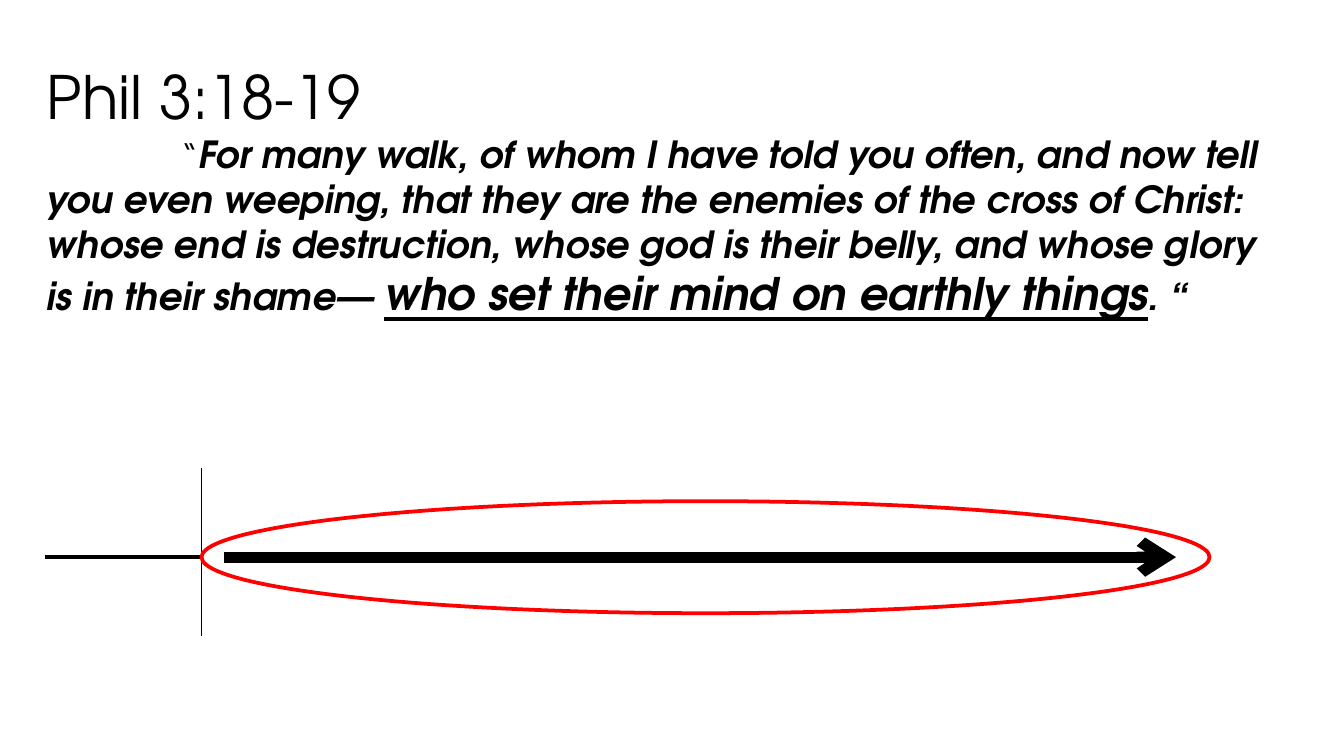
from lxml.etree import SubElement
from pptx import Presentation
from pptx.dml.color import RGBColor
from pptx.enum.shapes import MSO_CONNECTOR as Connector, MSO_SHAPE as Shape
from pptx.enum.text import MSO_AUTO_SIZE as AutoSize
from pptx.oxml.ns import qn
from pptx.util import Pt

FONT = "TeX Gyre Adventor"
BLACK = "000000"
WHITE = "FFFFFF"
RED = "FF0000"


def paint(color_format, color):
    """Set a colour from a hex string."""
    color_format.rgb = RGBColor.from_string(color)


def add_panel(slide, left, top, width, height):
    """Lay the white rounded panel in the given box."""
    panel = slide.shapes.add_shape(
        Shape.ROUNDED_RECTANGLE, Pt(left), Pt(top), Pt(width), Pt(height))
    panel.adjustments[0] = 0.02
    panel.shadow.inherit = False
    panel.fill.solid()
    paint(panel.fill.fore_color, WHITE)
    panel.line.fill.background()


def add_words(paragraph, words, size, emphasis=False, underline=False):
    """Append one styled run to a paragraph."""
    run = paragraph.add_run()
    run.text = words
    font = run.font
    font.name, font.size = FONT, Pt(size)
    font.bold = font.italic = emphasis
    font.underline = underline
    paint(font.color, BLACK)


def add_tab_stop(paragraph, position):
    """Set a left tab stop on a paragraph."""
    tabs = SubElement(paragraph._p.get_or_add_pPr(), qn("a:tabLst"))
    SubElement(tabs, qn("a:tab"), pos=str(Pt(position)), algn="l")


def add_passage(slide, left, top, width, height):
    """Write the reference and its verse in the given box."""
    passage = slide.shapes.add_textbox(Pt(left), Pt(top), Pt(width), Pt(height))
    frame = passage.text_frame
    frame.word_wrap = True
    frame.auto_size = AutoSize.SHAPE_TO_FIT_TEXT
    add_words(frame.paragraphs[0], "Phil 3:18-19", 32)
    verse = frame.add_paragraph()
    add_tab_stop(verse, 72)
    add_words(verse, "\t“", 18)
    add_words(
        verse,
        "For many walk, of whom I have told you often, and now tell you even "
        "weeping, that they are the enemies of the cross of Christ: whose end "
        "is destruction, whose god is their belly, and whose glory is in "
        "their shame— ",
        20, emphasis=True,
    )
    add_words(verse, "who set their mind on earthly things", 24,
              emphasis=True, underline=True)
    add_words(verse, ". “", 20, emphasis=True)


def add_stroke(slide, start, end, weight, arrow=False):
    """Draw a straight black line, with an arrowhead at its end if asked."""
    stroke = slide.shapes.add_connector(Connector.STRAIGHT, *map(Pt, start + end))
    stroke.line.width = Pt(weight)
    paint(stroke.line.color, BLACK)
    if arrow:
        SubElement(stroke.line._get_or_add_ln(), qn("a:tailEnd"), type="arrow")
    SubElement(stroke._element.spPr, qn("a:effectLst"))


def add_timeline(slide, left, top, width, height):
    """Draw the timeline with its divider and circled arrow in the given box."""
    middle = top + 48
    divider = left + 84
    ring_width, ring_height = width - 84, 60
    add_stroke(slide, (left, middle), (divider, middle), 2.25)
    add_stroke(slide, (divider, top), (divider, top + height), 0.75)
    add_stroke(slide, (divider + 12, middle), (left + width - 18, middle), 6, arrow=True)
    ring = slide.shapes.add_shape(
        Shape.OVAL, Pt(divider), Pt(middle - ring_height / 2),
        Pt(ring_width), Pt(ring_height))
    ring.shadow.inherit = False
    ring.fill.background()
    ring.line.width = Pt(2)
    paint(ring.line.color, RED)


def main():
    """Build and save the slide."""
    deck = Presentation()
    deck.slide_width, deck.slide_height = Pt(720), Pt(405)
    slide = deck.slides.add_slide(deck.slide_layouts[6])
    add_panel(slide, 7, 6, 706, 394)
    add_passage(slide, 18, 28.5, 678, 170)
    add_timeline(slide, 24, 250.5, 624, 90)
    deck.save("out.pptx")


if __name__ == "__main__":
    main()
